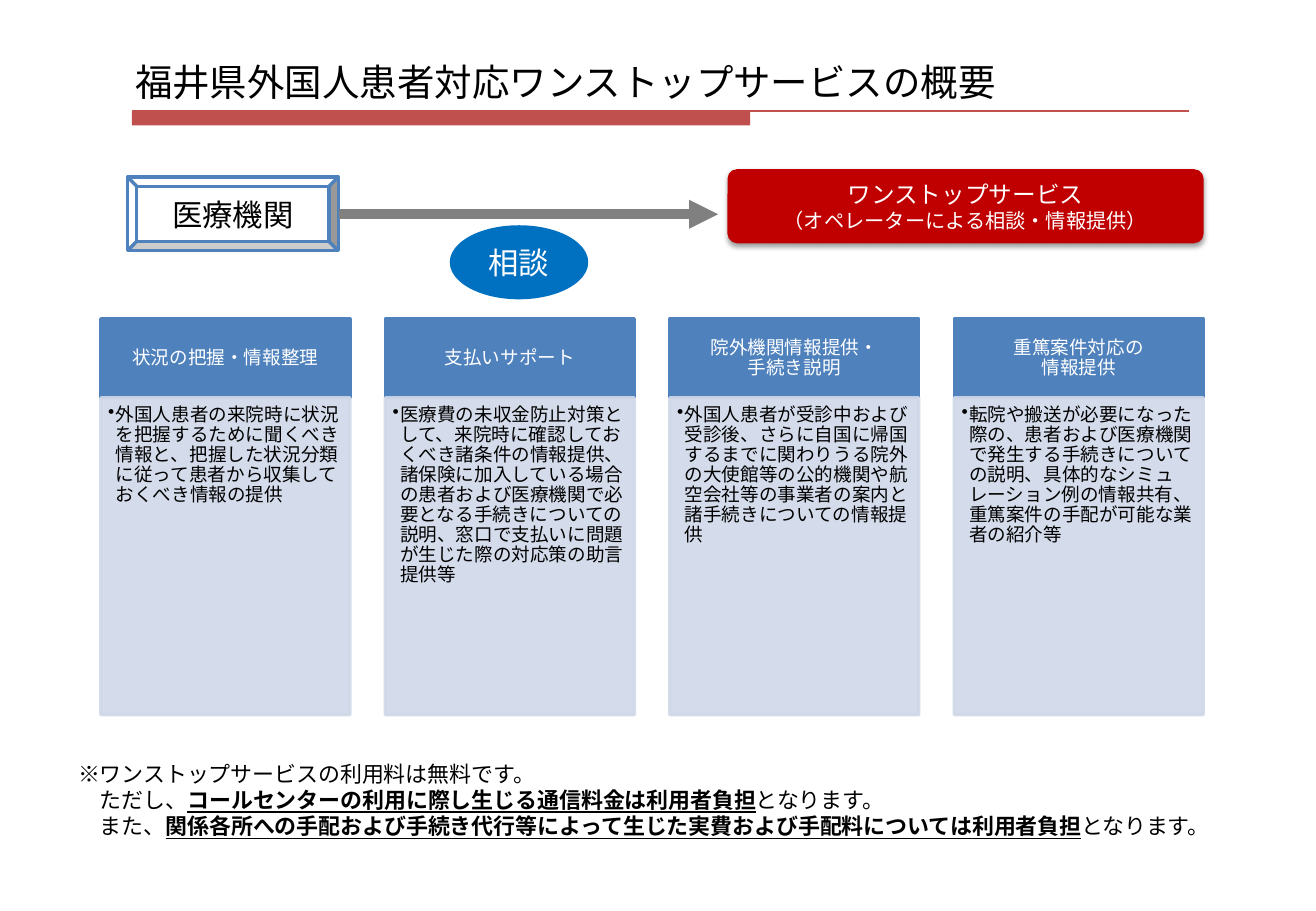
"""Build the overview slide of the Fukui one-stop service for foreign patients."""
from lxml import etree
from pptx import Presentation
from pptx import util as u
from pptx.dml.color import RGBColor
from pptx.enum import lang, shapes, text
from pptx.oxml.ns import qn

FONT = "Noto Sans CJK JP"
WHITE = RGBColor(0xFF, 0xFF, 0xFF)
BLACK = RGBColor(0, 0, 0)
RED = RGBColor(0xC0, 0x50, 0x4D)
DARK_RED = RGBColor(0xC0, 0, 0)
BRIGHT_BLUE = RGBColor(0, 0x70, 0xC0)
BLUE = RGBColor(0x4F, 0x81, 0xBD)
PALE_BLUE = RGBColor(0xD0, 0xD8, 0xE8)
GRAY = RGBColor(0x80, 0x80, 0x80)
LEFT, CENTER = text.PP_ALIGN.LEFT, text.PP_ALIGN.CENTER
TOP, MIDDLE = text.MSO_ANCHOR.TOP, text.MSO_ANCHOR.MIDDLE
KINDS = shapes.MSO_SHAPE

presentation = Presentation()
presentation.slide_width, presentation.slide_height = u.Pt(780), u.Pt(540)
slide = presentation.slides.add_slide(presentation.slide_layouts[6])


def add_box(kind, box, fill, line=None):
    """Add a flat shape with a fill and an optional 2 pt line."""
    shape = slide.shapes.add_shape(kind, *map(u.Pt, box))
    shape.shadow.inherit = False
    shape.fill.solid()
    shape.fill.fore_color.rgb = fill
    if line is None:
        shape.line.fill.background()
    else:
        shape.line.color.rgb = line
        shape.line.width = u.Pt(2)
    return shape


def write_text(shape, paragraphs, size, color, align=CENTER, anchor=MIDDLE,
               margins=(7.2, 3.6, 7.2, 3.6), spacing=1.0, bullet=False):
    """Write paragraphs, each a list of (text, extra font values) runs."""
    frame = shape.text_frame
    frame.word_wrap = True
    frame.vertical_anchor = anchor
    for side, margin in zip(("left", "top", "right", "bottom"), margins):
        setattr(frame, f"margin_{side}", u.Pt(margin))
    for index, runs in enumerate(paragraphs):
        paragraph = frame.add_paragraph() if index else frame.paragraphs[0]
        if bullet:
            properties = paragraph._p.get_or_add_pPr()
            properties.set("marL", str(u.Pt(4.5)))
            properties.set("indent", str(-u.Pt(4.5)))
            etree.SubElement(properties, qn("a:buChar"), char="•")
        paragraph.alignment = align
        paragraph.line_spacing = spacing
        for words, extra in runs:
            run = paragraph.add_run()
            run.text = words
            values = {"name": FONT, "size": u.Pt(size),
                      "language_id": lang.MSO_LANGUAGE_ID.JAPANESE, **extra}
            for name, value in values.items():
                setattr(run.font, name, value)
            run.font.color.rgb = color
            etree.SubElement(run._r.get_or_add_rPr(), qn("a:ea"), typeface=FONT)


add_box(KINDS.RECTANGLE, (78.2, 66, 366.5, 8.4), RED)

title = slide.shapes.add_textbox(*map(u.Pt, (73, 20.5, 548.6, 56.2)))
write_text(title, [[("福井県外国人患者対応ワンストップサービスの概要", {})]], 22.2, BLACK, LEFT)

service = add_box(KINDS.ROUNDED_RECTANGLE, (431.2, 100.3, 282.2, 43.9), DARK_RED)
service.adjustments[0] = 0.129
effects = service._element.spPr.find(qn("a:effectLst"))
shadow = etree.SubElement(effects, qn("a:outerShdw"), blurRad=str(u.Pt(3.1)),
                          dist=str(u.Pt(1.6)), dir="5400000", rotWithShape="0")
shadow_color = etree.SubElement(shadow, qn("a:srgbClr"), val="000000")
etree.SubElement(shadow_color, qn("a:alpha"), val="38000")
write_text(service, [[("ワンストップサービス", {})],
                     [("（オペレーターによる相談・情報提供）", {"size": u.Pt(12)})]],
           14, WHITE, margins=(0, 0, 0, 0))

consultation = add_box(KINDS.OVAL, (266.6, 133.5, 82.1, 43.9), BRIGHT_BLUE)
write_text(consultation, [[("相談", {})]], 18, WHITE)

hospital = add_box(KINDS.BEVEL, (75.6, 105, 124.9, 43.6), WHITE, BLUE)
write_text(hospital, [[("医療機関", {})]], 18, BLACK)

for ends, color, width, arrow in (((78.2, 66, 704.9, 66), RED, 1, False),
                                  ((200.9, 127, 425.7, 127), GRAY, 5.75, True)):
    connector = slide.shapes.add_connector(shapes.MSO_CONNECTOR.STRAIGHT, *map(u.Pt, ends))
    connector.line.color.rgb = color
    connector.line.width = u.Pt(width)
    etree.SubElement(connector._element.spPr, qn("a:effectLst"))
    if arrow:
        etree.SubElement(connector.line._get_or_add_ln(), qn("a:tailEnd"), type="triangle")

services = [
    (["状況の把握・情報整理"],
     "外国人患者の来院時に状況を把握するために聞くべき情報と、把握した状況分類に従って"
     "患者から収集しておくべき情報の提供"),
    (["支払いサポート"],
     "医療費の未収金防止対策として、来院時に確認しておくべき諸条件の情報提供、"
     "諸保険に加入している場合の患者および医療機関で必要となる手続きについての説明、"
     "窓口で支払いに問題が生じた際の対応策の助言提供等"),
    (["院外機関情報提供・", "手続き説明"],
     "外国人患者が受診中および受診後、さらに自国に帰国するまでに関わりうる"
     "院外の大使館等の公的機関や航空会社等の事業者の案内と諸手続きについての情報提供"),
    (["重篤案件対応の", "情報提供"],
     "転院や搬送が必要になった際の、患者および医療機関で発生する手続きについての説明、"
     "具体的なシミュレーション例の情報共有、重篤案件の手配が可能な業者の紹介等"),
]
for column, (heading, description) in enumerate(services):
    left = 59.8 + 168.6 * column
    header = add_box(KINDS.RECTANGLE, (left, 189, 147.6, 46.8), BLUE, BLUE)
    write_text(header, [[(line, {})] for line in heading], 11, WHITE,
               margins=(6.5, 3.6, 6.5, 3.6), spacing=0.9)
    body = add_box(KINDS.RECTANGLE, (left, 235.8, 147.6, 187.9), PALE_BLUE, PALE_BLUE)
    for color in body._element.spPr.iter(qn("a:srgbClr")):
        etree.SubElement(color, qn("a:alpha"), val="90000")
    write_text(body, [[(description, {})]], 11, BLACK, LEFT, TOP,
               (4.3, 4.3, 5, 7.2), 0.9, bullet=True)

strong = {"bold": True, "underline": True}
note = slide.shapes.add_textbox(*map(u.Pt, (39.2, 439.9, 694.8, 68.4)))
write_text(note, [
    [("※ワンストップサービスの利用料は無料です。", {})],
    [("　ただし、", {}), ("コールセンターの利用に際し生じる通信料金は利用者負担", strong),
     ("となります。", {})],
    [("　また、", {}),
     ("関係各所への手配および手続き代行等によって生じた実費および手配料については利用者負担", strong),
     ("となります。", {})],
], 13, BLACK, LEFT)

presentation.save("out.pptx")
